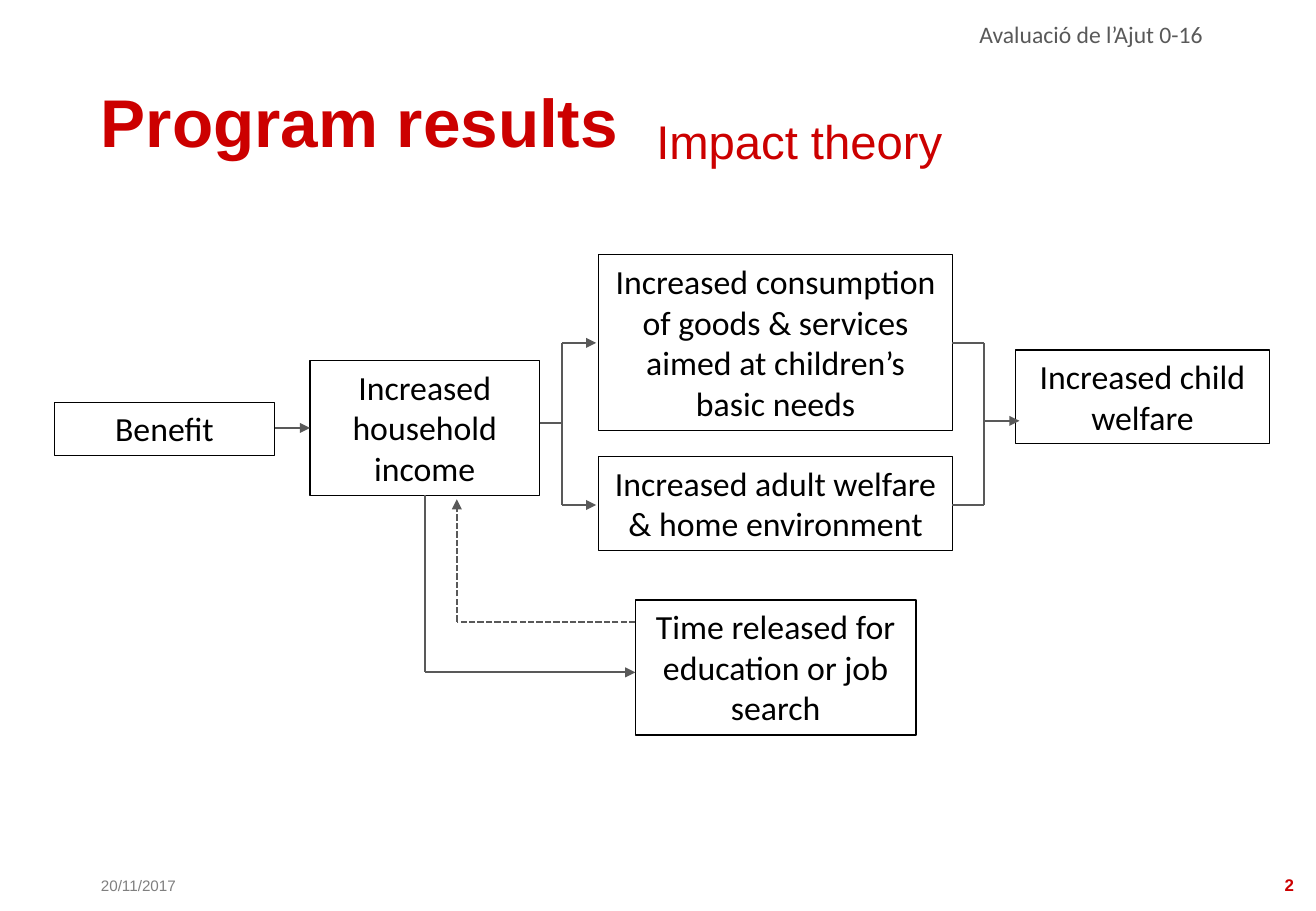
from dataclasses import dataclass

from lxml import etree
from pptx import Presentation
from pptx.dml.color import RGBColor
from pptx.enum.dml import MSO_LINE
from pptx.enum.shapes import MSO_CONNECTOR, MSO_SHAPE
from pptx.enum.text import MSO_ANCHOR, PP_ALIGN
from pptx.oxml.ns import qn
from pptx.util import Cm, Pt

STRAIGHT = MSO_CONNECTOR.STRAIGHT
RECTANGLE = MSO_SHAPE.RECTANGLE
DASHED = MSO_LINE.SQUARE_DOT
TOP, MIDDLE, BOTTOM = MSO_ANCHOR.TOP, MSO_ANCHOR.MIDDLE, MSO_ANCHOR.BOTTOM
LEFT, CENTER, RIGHT = PP_ALIGN.LEFT, PP_ALIGN.CENTER, PP_ALIGN.RIGHT

RED, BLACK, WHITE = "CC0000", "000000", "FFFFFF"
DARK_GREY, MID_GREY = "595959", "7F7F7F"


@dataclass
class Box:
    """Rectangle in centimetres."""
    left: float
    top: float
    width: float
    height: float

    @property
    def right(self):
        return self.left + self.width

    @property
    def bottom(self):
        return self.top + self.height

    @property
    def center_x(self):
        return self.left + self.width / 2

    @property
    def center_y(self):
        return self.top + self.height / 2

    def inner(self, left, top, width, height):
        return Box(self.left + left, self.top + top, width, height)

    def lengths(self):
        return Cm(self.left), Cm(self.top), Cm(self.width), Cm(self.height)


def color(hex_string):
    return RGBColor.from_string(hex_string)


def write(shape, text, size, font, ink, bold=False, align=LEFT,
          anchor=TOP, inset=0.25, wrap=True):
    frame = shape.text_frame
    frame.word_wrap = wrap
    frame.vertical_anchor = anchor
    frame.margin_left = Cm(inset)
    paragraph = frame.paragraphs[0]
    paragraph.alignment = align
    run = paragraph.add_run()
    run.text = text
    run.font.size = Pt(size)
    run.font.name = font
    run.font.bold = bold
    run.font.color.rgb = color(ink)
    return paragraph


def add_label(slide, box, *text, **style):
    return write(slide.shapes.add_textbox(*box.lengths()), *text, **style)


def add_panel(slide, box, outline, *text, **style):
    panel = slide.shapes.add_shape(RECTANGLE, *box.lengths())
    panel.shadow.inherit = False
    panel.fill.solid()
    panel.fill.fore_color.rgb = color(WHITE)
    panel.line.color.rgb = color(outline)
    panel.line.width = Pt(0.75)
    write(panel, *text, **style)


def add_link(slide, start, end, arrow=False, dashed=False):
    link = slide.shapes.add_connector(STRAIGHT, *map(Cm, start + end))
    link.line.color.rgb = color(DARK_GREY)
    link.line.width = Pt(1.25)
    if dashed:
        link.line.dash_style = DASHED
    if arrow:
        etree.SubElement(link.line._get_or_add_ln(), qn("a:tailEnd"), type="triangle")
    etree.SubElement(link._element.spPr, qn("a:effectLst"))


def add_path(slide, points, dashed=False):
    """Straight links through the points, with an arrowhead at the last one."""
    last = len(points) - 2
    for i, (start, end) in enumerate(zip(points, points[1:])):
        add_link(slide, start, end, arrow=i == last, dashed=dashed)


def add_header(slide, box):
    topic = add_label(slide, box.inner(6.75, 0, 17.35, 0.53), "Avaluació de l’Ajut 0-16",
                      14, "Calibri", DARK_GREY, align=RIGHT)
    topic.line_spacing = 0.3
    add_panel(slide, box.inner(0.81, 1.09, 11.63, 1.6), WHITE, "Program results",
              40, "Arial", RED, bold=True, anchor=MIDDLE, inset=0)
    add_panel(slide, box.inner(12.42, 1.5, 12.85, 1.6), WHITE, "Impact theory",
              28, "Arial", RED, anchor=MIDDLE, inset=0)


def add_impact_diagram(slide, box):
    benefit = box.inner(0, 3.08, 4.6, 1.12)
    income = box.inner(5.34, 2.21, 4.8, 2.82)
    consumption = box.inner(11.38, 0, 7.39, 3.68)
    adults = box.inner(11.38, 4.22, 7.39, 1.96)
    time = box.inner(12.14, 7.22, 5.87, 2.82)
    children = box.inner(20.09, 1.99, 5.31, 1.96)
    steps = [
        (benefit, "Benefit"),
        (income, "Increased household income"),
        (consumption, "Increased consumption of goods & services "
                      "aimed at children’s basic needs"),
        (adults, "Increased adult welfare & home environment"),
        (time, "Time released for education or job search"),
        (children, "Increased child welfare"),
    ]
    for step, text in steps:
        add_panel(slide, step, BLACK, text, 20, "Calibri", BLACK, align=CENTER)

    add_path(slide, [(benefit.right, income.center_y), (income.left, income.center_y)])

    fork_x, merge_x = income.right + 0.47, consumption.right + 0.66
    fork_y, merge_y = income.center_y - 0.1, children.center_y + 0.5
    branches = [consumption.center_y, adults.center_y + 0.03]
    add_link(slide, (income.right, fork_y), (fork_x, fork_y))
    add_link(slide, (fork_x, branches[0]), (fork_x, branches[1]))
    add_link(slide, (merge_x, branches[0]), (merge_x, branches[1]))
    for y in branches:
        add_link(slide, (fork_x, y), (consumption.left - 0.06, y), arrow=True)
        add_link(slide, (consumption.right, y), (merge_x, y))
    add_link(slide, (merge_x, merge_y), (children.left + 0.08, merge_y), arrow=True)

    outward_y, return_y = time.center_y + 0.1, time.top + 0.45
    return_x = income.center_x + 0.67
    add_path(slide, [(income.center_x, income.bottom), (income.center_x, outward_y),
                     (time.left, outward_y)])
    add_path(slide, [(time.left, return_y), (return_x, return_y),
                     (return_x, income.bottom + 0.08)], dashed=True)


def add_footer(slide, box):
    add_label(slide, box.inner(0, 0, 2.34, 0.62), "20/11/2017", 9, "Arial", MID_GREY,
              anchor=BOTTOM, inset=0, wrap=False)
    add_label(slide, box.inner(box.width - 1.27, 0, 1.27, 0.62), "2", 10, "Arial", RED,
              bold=True, align=RIGHT, anchor=BOTTOM, inset=0, wrap=False)


def main():
    deck = Presentation()
    deck.slide_width, deck.slide_height = Cm(27.51), Cm(19.05)
    slide = deck.slides.add_slide(deck.slide_layouts[6])
    add_footer(slide, Box(2.11, 18.22, 25.19, 0.62))
    add_header(slide, Box(1.3, 0.64, 25.27, 3.1))
    add_impact_diagram(slide, Box(1.14, 5.33, 25.4, 10.04))
    deck.save("out.pptx")


if __name__ == "__main__":
    main()
